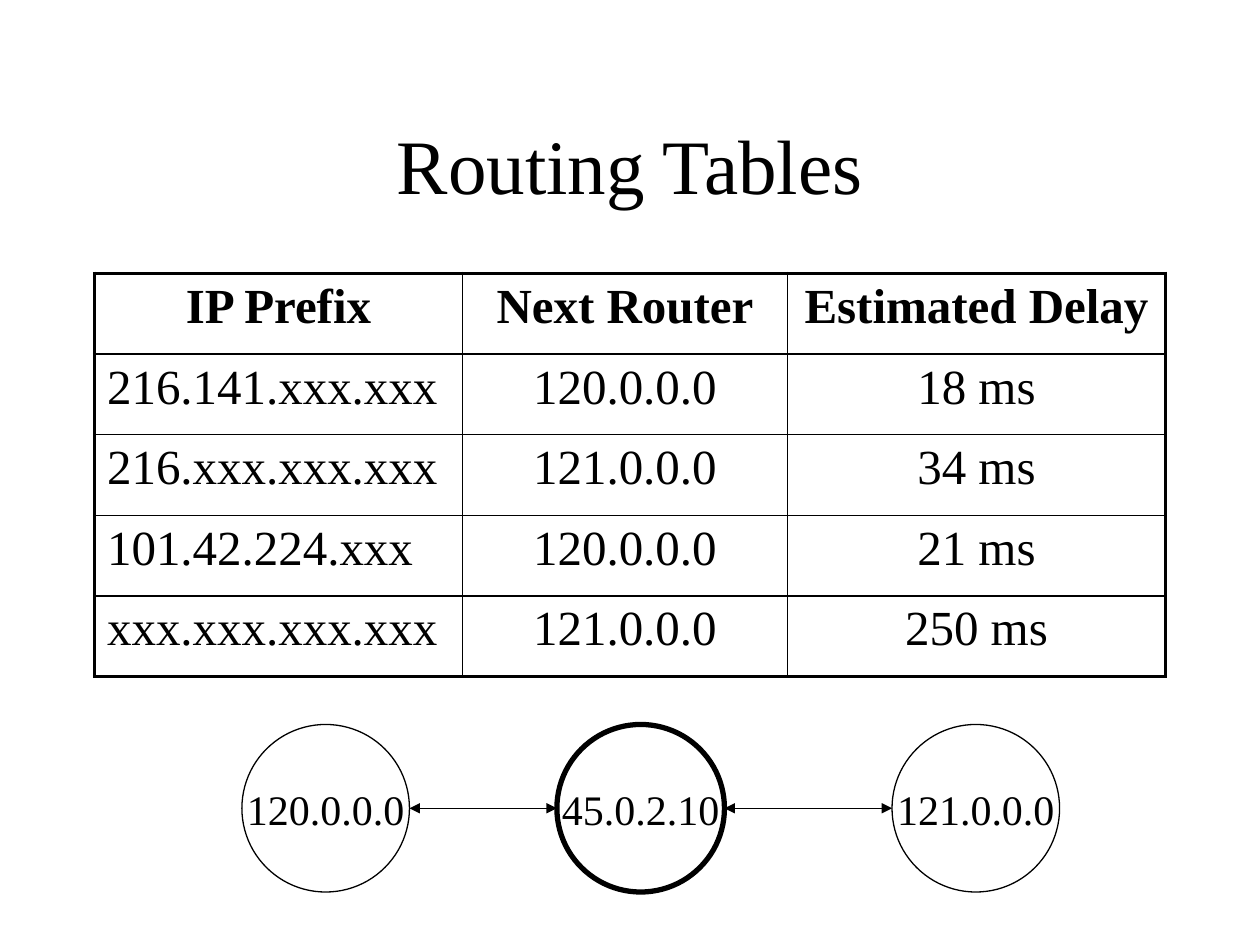
import pptx
import pptx.util
import pptx.enum.shapes
import pptx.enum.text
import pptx.dml.color
import pptx.oxml
import pptx.oxml.ns
from pptx.util import Inches

COLORS = {"ink": "000000", "paper": "FFFFFF"}
FONT = "Times New Roman"
ALIGN = pptx.enum.text.PP_ALIGN
ANCHOR = pptx.enum.text.MSO_ANCHOR
THIN, RULE, FRAME, BOLD_RING = 0.75, 1, 2.25, 3


def rgb(name):
    return pptx.dml.color.RGBColor.from_string(COLORS[name])


class SlideBuilder:
    """Holds the style and the current slide."""

    def __init__(self, slide):
        self.slide = slide
        self.shapes = slide.shapes

    def add_text(self, tf, text, size, align=ALIGN.CENTER, bold=False):
        p = tf.paragraphs[0]
        p.alignment = align
        r = p.add_run()
        r.text = text
        font = {"name": FONT, "size": pptx.util.Pt(size), "bold": bold}
        for key, value in font.items():
            setattr(r.font, key, value)
        r.font.color.rgb = rgb("ink")

    def outline(self, sp, width):
        sp.line.color.rgb = rgb("ink")
        sp.line.width = pptx.util.Pt(width)

    def title(self, text, x, y, w, h):
        sp = self.shapes.add_textbox(Inches(x), Inches(y), Inches(w), Inches(h))
        tf = sp.text_frame
        tf.word_wrap = True
        tf.vertical_anchor = ANCHOR.MIDDLE
        self.add_text(tf, text, 44)

    def border(self, cell, side, width):
        tag = {"left": "lnL", "right": "lnR", "top": "lnT", "bottom": "lnB"}[side]
        ln = pptx.oxml.parse_xml(
            f'<a:{tag} {pptx.oxml.ns.nsdecls("a")} w="{pptx.util.Pt(width)}">'
            f'<a:solidFill><a:srgbClr val="{COLORS["ink"]}"/></a:solidFill></a:{tag}>')
        cell._tc.get_or_add_tcPr().append(ln)

    def table(self, rows, x, y, widths, row_height):
        n_rows, n_cols = len(rows), len(widths)
        frame = self.shapes.add_table(
            n_rows, n_cols, Inches(x), Inches(y),
            Inches(sum(widths)), Inches(row_height * n_rows))
        table = frame.table
        for flag in ("first_row", "horz_banding"):
            setattr(table, flag, False)
        for column, width in zip(table.columns, widths):
            column.width = Inches(width)
        for i, row in enumerate(rows):
            table.rows[i].height = Inches(row_height)
            for j, text in enumerate(row):
                cell = table.cell(i, j)
                left = i > 0 and j == 0
                self.add_text(cell.text_frame, text, 28,
                              ALIGN.LEFT if left else ALIGN.CENTER, bold=i == 0)
                # Heavy outer frame, fine inner rules
                outer = {"left": j == 0, "right": j == n_cols - 1,
                         "top": i == 0, "bottom": i == n_rows - 1}
                for side, is_outer in outer.items():
                    self.border(cell, side, FRAME if is_outer else RULE)
                cell.fill.background()

    def router(self, text, x, y, size, width):
        sp = self.shapes.add_shape(
            pptx.enum.shapes.MSO_SHAPE.OVAL,
            Inches(x), Inches(y), Inches(size), Inches(size))
        sp.shadow.inherit = False
        sp.fill.background()
        self.outline(sp, width)
        tf = sp.text_frame
        tf.word_wrap = False
        tf.vertical_anchor = ANCHOR.MIDDLE
        self.add_text(tf, text, 24)

    def link(self, x1, x2, y):
        sp = self.shapes.add_connector(
            pptx.enum.shapes.MSO_CONNECTOR.STRAIGHT,
            Inches(x1), Inches(y), Inches(x2), Inches(y))
        self.outline(sp, THIN)
        ns = pptx.oxml.ns.nsdecls("a")
        ln = sp.line._get_or_add_ln()
        for end in ("headEnd", "tailEnd"):
            ln.append(pptx.oxml.parse_xml(f'<a:{end} {ns} type="triangle"/>'))
        sp._element.spPr.append(pptx.oxml.parse_xml(f"<a:effectLst {ns}/>"))


def main():
    prs = pptx.Presentation()
    prs.slide_width, prs.slide_height = Inches(10), Inches(7.5)
    s = prs.slides.add_slide(prs.slide_layouts[6])
    s.background.fill.solid()
    s.background.fill.fore_color.rgb = rgb("paper")
    b = SlideBuilder(s)

    b.title("Routing Tables", 0.75, 0.67, 8.5, 1.25)

    # Routing table
    b.table([
        ("IP Prefix", "Next Router", "Estimated Delay"),
        ("216.141.xxx.xxx", "120.0.0.0", "18 ms"),
        ("216.xxx.xxx.xxx", "121.0.0.0", "34 ms"),
        ("101.42.224.xxx", "120.0.0.0", "21 ms"),
        ("xxx.xxx.xxx.xxx", "121.0.0.0", "250 ms"),
    ], 0.75, 2.17, (2.92, 2.58, 3), 0.64)

    # Routers, the local one in the middle with a heavy ring
    top, size = 5.75, 1.33
    routers = [("120.0.0.0", 1.92, THIN), ("45.0.2.10", 4.42, BOLD_RING),
               ("121.0.0.0", 7.08, THIN)]
    for text, x, width in routers:
        b.router(text, x, top, size, width)

    # Two-way links between neighbouring routers
    for (_, x1, _), (_, x2, _) in zip(routers, routers[1:]):
        b.link(x1 + size, x2, top + size / 2)

    prs.save("out.pptx")


if __name__ == "__main__":
    main()
